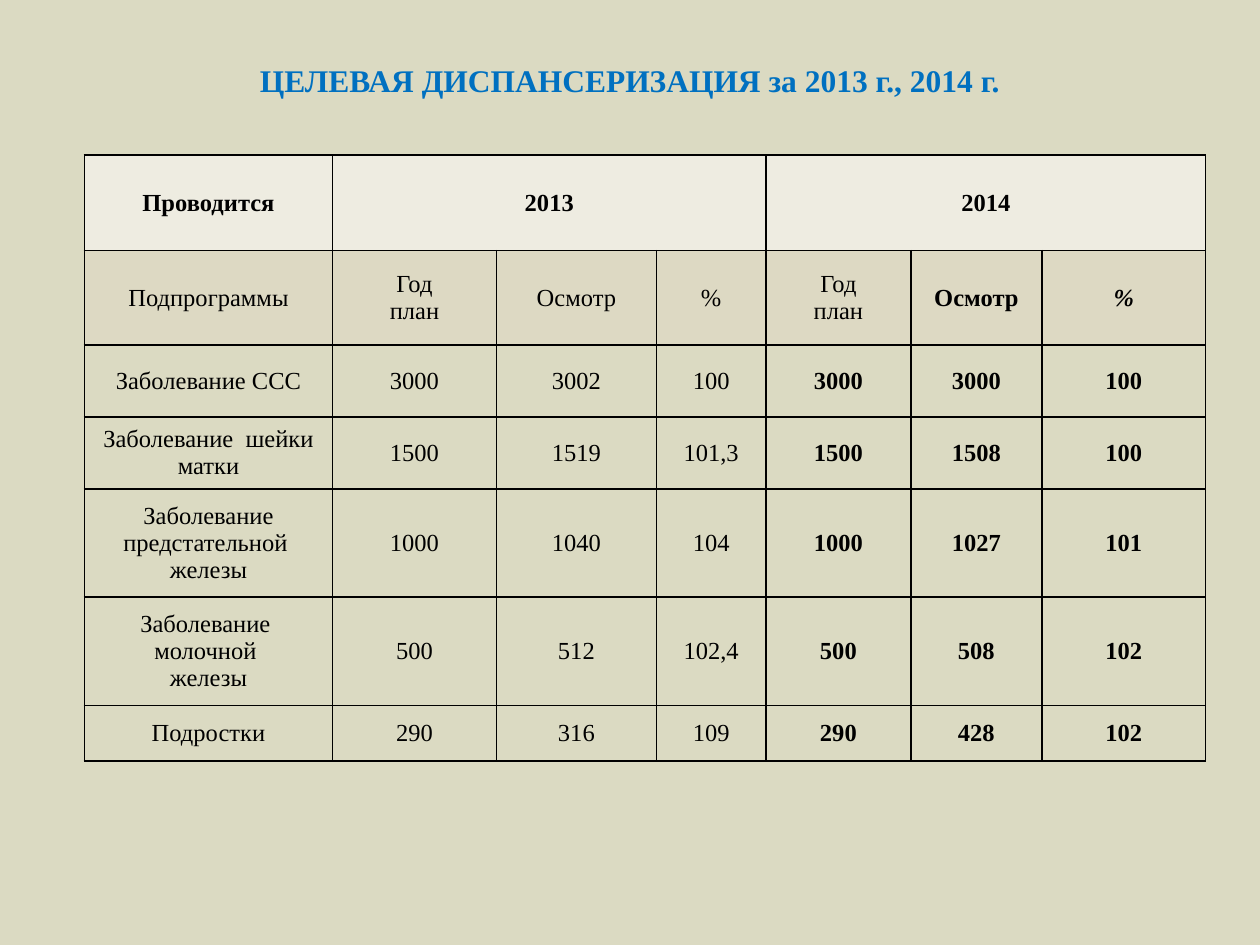
from dataclasses import dataclass

from lxml import etree
from pptx import Presentation
from pptx.dml.color import RGBColor
from pptx.enum.text import MSO_ANCHOR, MSO_AUTO_SIZE, PP_ALIGN
from pptx.oxml.ns import qn
from pptx.util import Inches, Pt

CENTER = PP_ALIGN.CENTER
MIDDLE = MSO_ANCHOR.MIDDLE
FIXED = MSO_AUTO_SIZE.NONE


@dataclass(frozen=True)
class Theme:
    font: str = "Times New Roman"
    page: str = "DBDAC2"
    title: str = "0070C0"
    ink: str = "000000"
    head: str = "EEECE1"
    sub: str = "DDD9C3"
    big: int = 18
    body: int = 14
    line: int = 1


THEME = Theme()
WIDE, HIGH = 10, 7.5
TITLE = "ЦЕЛЕВАЯ ДИСПАНСЕРИЗАЦИЯ за 2013 г., 2014 г."
COLS = [1.97, 1.3, 1.27, 0.87, 1.15, 1.04, 1.3]
ROWS = [0.76, 0.75, 0.57, 0.57, 0.86, 0.86, 0.44]
YEAR_COLS = 3  # columns under each year
PLAN = "Год\nплан"
DATA = [
    ["Проводится", "2013", "", "", "2014", "", ""],
    ["Подпрограммы", PLAN, "Осмотр", "%", PLAN, "Осмотр", "%"],
    ["Заболевание ССС", "3000", "3002", "100", "3000", "3000", "100"],
    ["Заболевание  шейки матки", "1500", "1519", "101,3", "1500", "1508", "100"],
    ["Заболевание предстательной \nжелезы",
     "1000", "1040", "104", "1000", "1027", "101"],
    ["Заболевание \nмолочной \nжелезы",
     "500", "512", "102,4", "500", "508", "102"],
    ["Подростки", "290", "316", "109", "290", "428", "102"],
]


def write(frame, text, size, color, bold=False, italic=False):
    for num, line in enumerate(text.split("\n")):
        para = frame.paragraphs[0] if num == 0 else frame.add_paragraph()
        para.alignment = CENTER
        run = para.add_run()
        run.text = line
        font = run.font
        font.name, font.size = THEME.font, Pt(size)
        font.bold, font.italic = bold, italic
        font.color.rgb = RGBColor.from_string(color)


def add_title(slide, box):
    left, top, width, height = box
    shape = slide.shapes.add_textbox(*map(Inches, box))
    frame = shape.text_frame
    frame.word_wrap, frame.auto_size = True, FIXED
    frame.vertical_anchor = MIDDLE
    # The line sits high, across the top edge of its box
    frame.margin_top, frame.margin_bottom = 0, Inches(height * 0.92)
    write(frame, TITLE, THEME.big, THEME.title, bold=True)


def add_border(cell):
    """Rule all four sides; the lines must come before the cell's fill."""
    props = cell._tc.get_or_add_tcPr()
    for pos, side in enumerate(("lnL", "lnR", "lnT", "lnB")):
        line = etree.Element(qn(f"a:{side}"), w=str(Pt(THEME.line)))
        fill = etree.SubElement(line, qn("a:solidFill"))
        etree.SubElement(fill, qn("a:srgbClr"), val=THEME.ink)
        props.insert(pos, line)


def style_cell(cell, row):
    cell.vertical_anchor = MIDDLE
    cell.margin_left = cell.margin_right = Inches(0.07)
    cell.margin_top = cell.margin_bottom = 0
    if row < 2:
        cell.fill.solid()
        color = (THEME.head, THEME.sub)[row]
        cell.fill.fore_color.rgb = RGBColor.from_string(color)
    else:
        cell.fill.background()
    add_border(cell)


def is_bold(row, col):
    """The head row and the 2014 results stand out."""
    return row == 0 or col > (4 if row == 1 else 3)


def add_grid(slide, box):
    left, top, width, height = box
    frame = slide.shapes.add_table(len(ROWS), len(COLS), *map(Inches, box))
    table = frame.table
    table.first_row = table.horz_banding = False
    for col, share in zip(table.columns, COLS):
        col.width = Inches(width * share / sum(COLS))
    for row, share in zip(table.rows, ROWS):
        row.height = Inches(height * share / sum(ROWS))
    for start in (1, 1 + YEAR_COLS):
        table.cell(0, start).merge(table.cell(0, start + YEAR_COLS - 1))
    for row, texts in enumerate(DATA):
        for col, text in enumerate(texts):
            cell = table.cell(row, col)
            style_cell(cell, row)
            if text:
                slant = row == 1 and col == len(COLS) - 1
                write(cell.text_frame, text, THEME.body, THEME.ink,
                      is_bold(row, col), slant)


def main():
    deck = Presentation()
    deck.slide_width, deck.slide_height = Inches(WIDE), Inches(HIGH)
    slide = deck.slides.add_slide(deck.slide_layouts[6])
    back = slide.background.fill
    back.solid()
    back.fore_color.rgb = RGBColor.from_string(THEME.page)
    add_title(slide, (WIDE * 0.05, 0.61, WIDE * 0.9, 0.62))
    add_grid(slide, (0.67, 1.23, sum(COLS), sum(ROWS)))
    deck.save("out.pptx")


if __name__ == "__main__":
    main()
